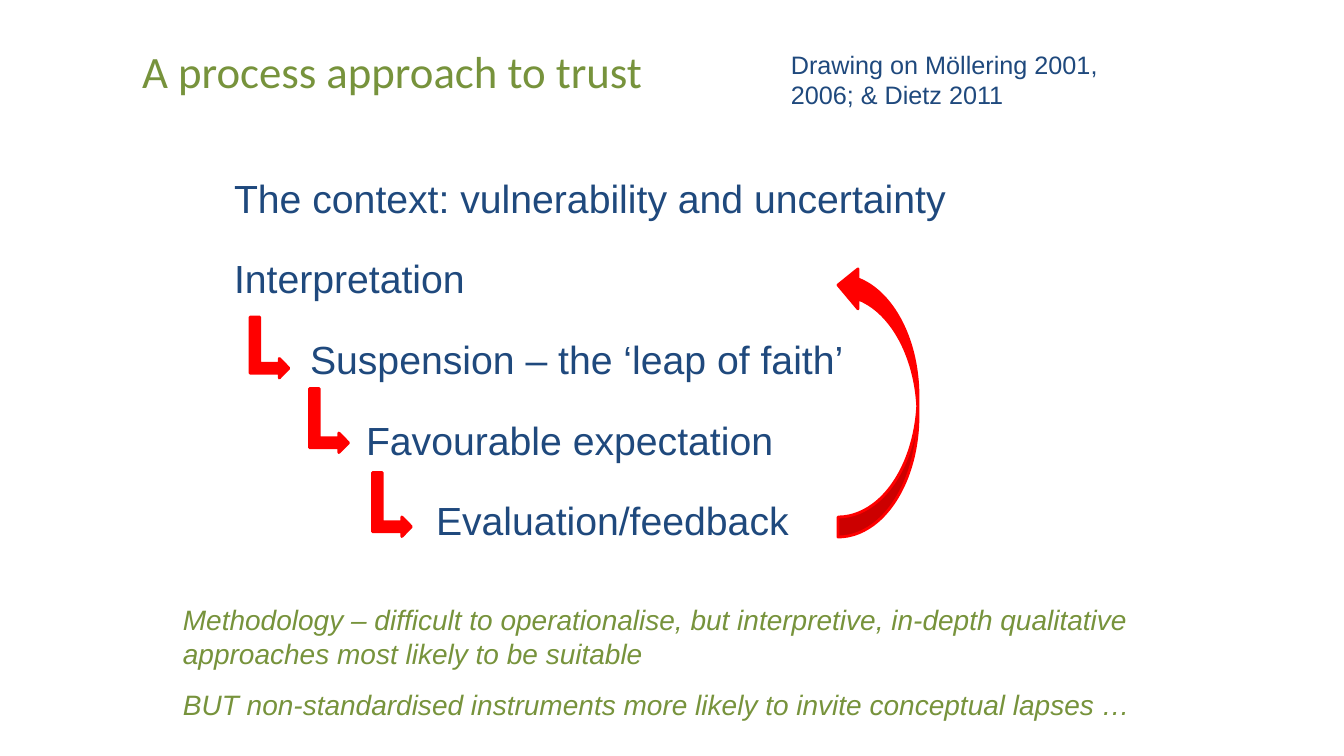
import pptx
import pptx.util
import pptx.dml.color
import pptx.enum.shapes
import pptx.enum.text
import pptx.oxml

PX = 9071.43
GREEN = pptx.dml.color.RGBColor(0x77, 0x93, 0x3C)
NAVY = pptx.dml.color.RGBColor(0x1F, 0x49, 0x7D)
RED = pptx.dml.color.RGBColor(0xFF, 0x00, 0x00)
BULLET_NONE = '<a:buNone xmlns:a="http://schemas.openxmlformats.org/drawingml/2006/main"/>'


def emu(px):
    return pptx.util.Emu(round(px * PX))


def write(shape, box, lines, size, color, font="Arial", spacing=0, italic=False):
    shape.left, shape.top, shape.width, shape.height = map(emu, box)
    frame = shape.text_frame
    frame.word_wrap = True
    frame.auto_size = pptx.enum.text.MSO_AUTO_SIZE.NONE
    frame.vertical_anchor = pptx.enum.text.MSO_ANCHOR.TOP
    for index, (text, indent) in enumerate(lines):
        paragraph = frame.paragraphs[0] if index == 0 else frame.add_paragraph()
        paragraph.text = text
        paragraph.alignment = pptx.enum.text.PP_ALIGN.LEFT
        paragraph.space_before = pptx.util.Pt(spacing if index else 0)
        paragraph.space_after = pptx.util.Pt(spacing)
        properties = paragraph._p.get_or_add_pPr()
        properties.set("marL", str(emu(indent)))
        properties.set("indent", "0")
        properties.append(pptx.oxml.parse_xml(BULLET_NONE))
        paragraph.font.name = font
        paragraph.font.size = pptx.util.Pt(size)
        paragraph.font.color.rgb = color
        paragraph.font.italic = italic


presentation = pptx.Presentation()
presentation.slide_width = emu(1344)
presentation.slide_height = emu(756)
slide = presentation.slides.add_slide(presentation.slide_layouts[1])
title, process = slide.placeholders

write(title, (132, 39, 914, 88), [("A process approach to trust", 0)], 32, GREEN, "Calibri")

source = slide.shapes.add_textbox(0, 0, 0, 0)
write(source, (781, 44, 344, 72), [("Drawing on Möllering 2001, 2006; & Dietz 2011", 0)], 18, NAVY)

stages = [
    ("The context: vulnerability and uncertainty", 0),
    ("Interpretation", 0),
    ("Suspension – the ‘leap of faith’", 76),
    ("Favourable expectation", 132),
    ("Evaluation/feedback", 202),
]
write(process, (224, 169, 914, 383), stages, 28, NAVY, spacing=12)

BENT = pptx.enum.shapes.MSO_SHAPE.BENT_UP_ARROW
CURVED = pptx.enum.shapes.MSO_SHAPE.CURVED_RIGHT_ARROW
arrows = [
    (BENT, 239, 328, 61, 39, 90),
    (BENT, 297, 401, 64, 39, 90),
    (BENT, 360, 485, 64, 39, 90),
    (CURVED, 838, 265, 80, 272, 180),
]
for preset, left, top, width, height, rotation in arrows:
    arrow = slide.shapes.add_shape(preset, emu(left), emu(top), emu(width), emu(height))
    arrow.rotation = rotation
    arrow.shadow.inherit = False
    arrow.fill.solid()
    arrow.fill.fore_color.rgb = RED
    arrow.line.color.rgb = RED
    arrow.line.width = pptx.util.Pt(2)

methodology = slide.shapes.add_textbox(0, 0, 0, 0)
remarks = [
    ("Methodology – difficult to operationalise, but interpretive, in-depth qualitative approaches most likely to be suitable", 0),
    ("BUT non-standardised instruments more likely to invite conceptual lapses …", 0),
]
write(methodology, (173, 598, 1036, 129), remarks, 20, GREEN, spacing=6, italic=True)

presentation.save("out.pptx")
